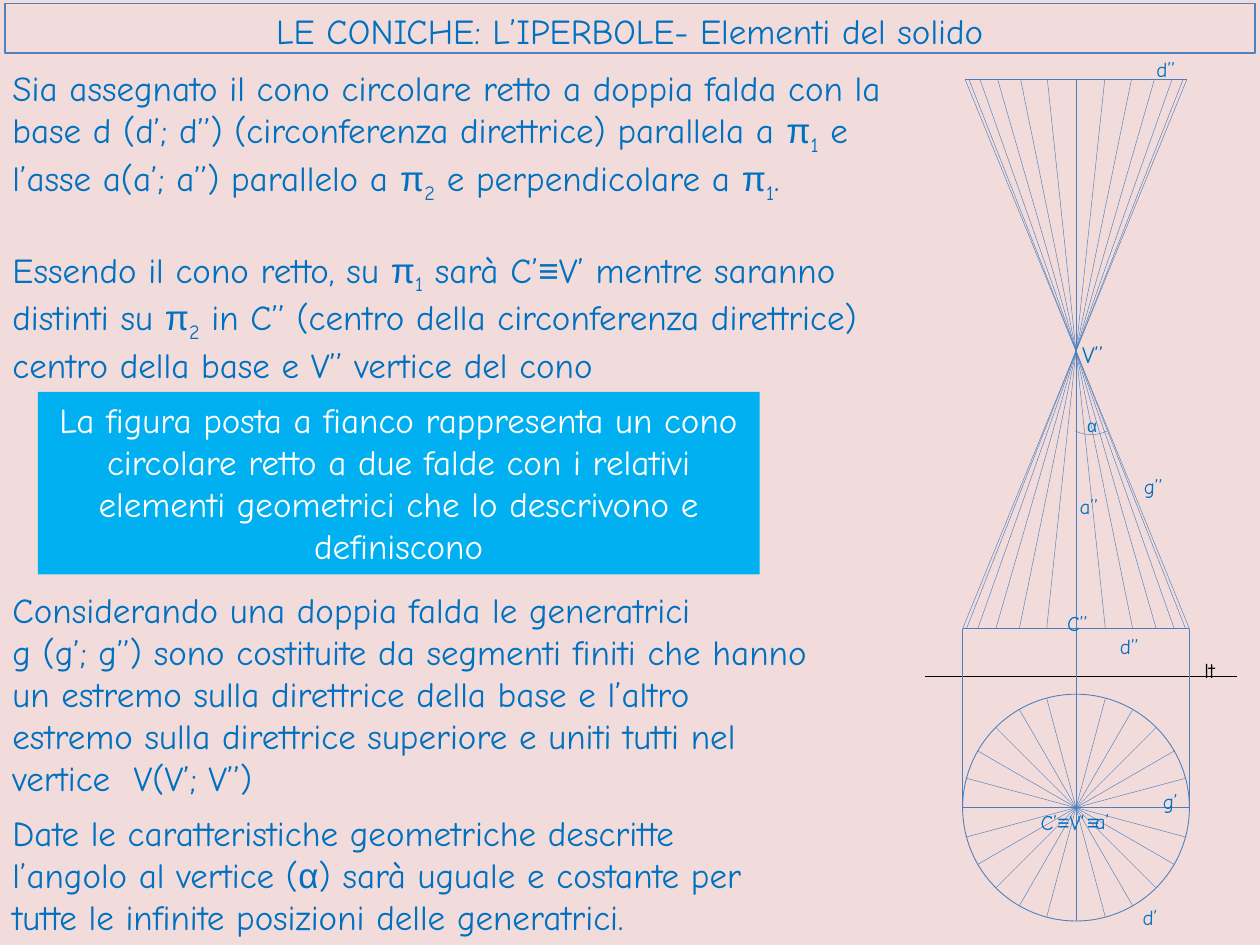
from dataclasses import dataclass
from itertools import groupby
from math import cos, radians, sin

from lxml import etree
from pptx import Presentation
from pptx.dml.color import RGBColor
from pptx.enum import shapes, text
from pptx.oxml import ns
from pptx.util import Inches, Pt

BACKGROUND = RGBColor(0xF2, 0xDC, 0xDB)
TEXT_BLUE = RGBColor(0x00, 0x70, 0xC0)
OUTLINE_BLUE = RGBColor(0x4F, 0x81, 0xBD)
LINE_BLUE = RGBColor(0x4B, 0x7E, 0xBC)
CALLOUT_BLUE = RGBColor(0x00, 0xB0, 0xF0)
WHITE = RGBColor(0xFF, 0xFF, 0xFF)
BLACK = RGBColor(0x00, 0x00, 0x00)

FONT, SYMBOL_FONT = "Comic Neue", "Arial"
SYMBOLS = "π≡α"
SUBSCRIPTS = {"₁": "1", "₂": "2"}

# Cone: plan centre and radius, heights of the upper and lower base, ground line
AXIS_X, PLAN_Y, RADIUS = 8.54, 6.41, 0.9
TOP_Y, TOP_RADIUS, BASE_Y, GROUND_Y = 0.63, 0.88, 4.99, 5.37
STEP = 15


@dataclass
class Block:
    left: float
    top: float
    width: float
    height: float
    paragraphs: tuple[str, ...]
    size: float = 20
    color: RGBColor = TEXT_BLUE
    align: text.PP_ALIGN = text.PP_ALIGN.LEFT
    anchor: text.MSO_ANCHOR = text.MSO_ANCHOR.TOP


@dataclass
class Label:
    left: float
    top: float
    words: str
    width: float = 0.39
    height: float = 0.21
    size: float = 12
    color: RGBColor = TEXT_BLUE
    anchor: text.MSO_ANCHOR = text.MSO_ANCHOR.TOP


MIDDLE = text.MSO_ANCHOR.MIDDLE
CENTER = text.PP_ALIGN.CENTER

TITLE = Block(0.04, 0.03, 9.92, 0.39,
              ("LE CONICHE: L’IPERBOLE- Elementi del solido",), align=CENTER)
CALLOUT = Block(0.3, 3.11, 5.73, 1.45, (
    "La figura posta a fianco rappresenta un cono circolare retto a due falde "
    "con i relativi elementi geometrici che lo descrivono e definiscono",),
    color=WHITE, align=CENTER)
BODY = [
    Block(0, 0.48, 7.28, 1.45, (
        "Sia assegnato il cono circolare retto a doppia falda con la base d (d’; d’’) "
        "(circonferenza direttrice) parallela a π₁ e l’asse a(a’; a’’) parallelo a π₂ "
        "e perpendicolare a π₁.",)),
    Block(0, 1.92, 7.28, 1.11, (
        "Essendo il cono retto, su π₁ sarà C’≡V’ mentre saranno distinti su π₂ in C’’ "
        "(centro della circonferenza direttrice) centro della base e V’’ vertice del cono",)),
    Block(0, 4.62, 6.62, 1.78, (
        "Considerando una doppia falda le generatrici",
        "g (g’; g’’) sono costituite da segmenti finiti che hanno un estremo sulla "
        "direttrice della base e l’altro estremo sulla direttrice superiore e uniti "
        "tutti nel vertice  V(V’; V’’)")),
    Block(0, 6.39, 6.42, 1.11, (
        "Date le caratteristiche geometriche descritte l’angolo al vertice (α) sarà "
        "uguale e costante per tutte le infinite posizioni delle generatrici.",)),
]
LABELS = [
    Label(9.08, 0.4, "d’’"),
    Label(8.49, 2.65, "V’’", height=0.23, size=13.5),
    Label(8.53, 3.26, "α", width=0.3, height=0.23, size=10, anchor=MIDDLE),
    Label(8.98, 3.78, "g’’", height=0.16, anchor=MIDDLE),
    Label(8.47, 3.87, "a’’"),
    Label(8.37, 4.8, "C’’"),
    Label(8.79, 4.98, "d’’"),
    Label(9.46, 5.17, "lt", color=BLACK),
    Label(9.13, 6.25, "g’", anchor=MIDDLE),
    Label(8.16, 6.42, "C’≡V’", width=0.59, anchor=MIDDLE),
    Label(8.53, 6.42, "≡", width=0.3, anchor=MIDDLE),
    Label(8.59, 6.41, "a’", anchor=MIDDLE),
    Label(8.97, 7.13, "d’"),
]


def box(item: Block | Label) -> tuple[Inches, ...]:
    return tuple(Inches(v) for v in (item.left, item.top, item.width, item.height))


def char_style(char: str) -> str:
    if char in SYMBOLS:
        return "symbol"
    return "subscript" if char in SUBSCRIPTS else "plain"


def write(frame, paragraphs, size, color, align, anchor) -> None:
    """Fill a frame, setting symbols in their own font and lowering indices."""
    frame.word_wrap = True
    frame.vertical_anchor = anchor
    for index, words in enumerate(paragraphs):
        paragraph = frame.add_paragraph() if index else frame.paragraphs[0]
        paragraph.alignment = align
        paragraph.font.size = Pt(size)
        paragraph.font.name = FONT
        paragraph.font.color.rgb = color
        for style, chars in groupby(words, char_style):
            run = paragraph.add_run()
            run.text = "".join(SUBSCRIPTS.get(c, c) for c in chars)
            if style == "symbol":
                run.font.name = SYMBOL_FONT
            elif style == "subscript":
                run.font._element.set("baseline", "-25000")


def add_block(slide, block: Block, shape=None) -> None:
    shape = shape or slide.shapes.add_textbox(*box(block))
    write(shape.text_frame, block.paragraphs, block.size, block.color,
          block.align, block.anchor)


def add_label(slide, label: Label) -> None:
    frame = slide.shapes.add_textbox(*box(label)).text_frame
    write(frame, (label.words,), label.size, label.color,
          text.PP_ALIGN.LEFT, label.anchor)


def add_outline(slide, kind, left, top, width, height, color, weight):
    shape = slide.shapes.add_shape(kind, *map(Inches, (left, top, width, height)))
    shape.shadow.inherit = False
    shape.fill.background()
    shape.line.color.rgb = color
    shape.line.width = Pt(weight)
    return shape


def add_line(slide, x1: float, y1: float, x2: float, y2: float,
             color: RGBColor = LINE_BLUE, weight: float = 0.25) -> None:
    line = slide.shapes.add_connector(
        shapes.MSO_CONNECTOR.STRAIGHT, *map(Inches, (x1, y1, x2, y2)))
    line.line.color.rgb = color
    line.line.width = Pt(weight)
    etree.SubElement(line._element.spPr, ns.qn("a:effectLst"))


def draw_elevation(slide) -> None:
    for angle in range(0, 181, STEP):
        if angle != 90:
            reach = cos(radians(angle))
            add_line(slide, AXIS_X - TOP_RADIUS * reach, TOP_Y,
                     AXIS_X + RADIUS * reach, BASE_Y)
    add_line(slide, AXIS_X, TOP_Y, AXIS_X, PLAN_Y)
    add_line(slide, AXIS_X - TOP_RADIUS, TOP_Y, AXIS_X + TOP_RADIUS, TOP_Y)
    add_line(slide, AXIS_X - RADIUS, BASE_Y, AXIS_X + RADIUS, BASE_Y, weight=0.5)
    for side in (-RADIUS, RADIUS):
        add_line(slide, AXIS_X + side, BASE_Y, AXIS_X + side, PLAN_Y)
    vertex_angle = add_outline(slide, shapes.MSO_SHAPE.ARC,
                               8.41, 3.01, 0.5, 0.44, LINE_BLUE, 0.25)
    vertex_angle.rotation = 180
    vertex_angle.adjustments[0] = 142.53
    vertex_angle.adjustments[1] = 182


def draw_plan(slide) -> None:
    add_line(slide, 7.34, GROUND_Y, 9.82, GROUND_Y, BLACK)
    add_outline(slide, shapes.MSO_SHAPE.OVAL, AXIS_X - RADIUS, PLAN_Y - RADIUS,
                2 * RADIUS, 2 * RADIUS, OUTLINE_BLUE, 0.5)
    for angle in range(0, 360, STEP):
        if angle != 270:  # the axis already runs down to the centre
            add_line(slide, AXIS_X, PLAN_Y, AXIS_X + RADIUS * cos(radians(angle)),
                     PLAN_Y + RADIUS * sin(radians(angle)))


def main() -> None:
    deck = Presentation()
    deck.slide_width, deck.slide_height = Inches(10), Inches(7.5)
    slide = deck.slides.add_slide(deck.slide_layouts[6])
    slide.background.fill.solid()
    slide.background.fill.fore_color.rgb = BACKGROUND

    title = add_outline(slide, shapes.MSO_SHAPE.RECTANGLE, TITLE.left, TITLE.top,
                        TITLE.width, TITLE.height, OUTLINE_BLUE, 0.75)
    add_block(slide, TITLE, title)
    for block in BODY:
        add_block(slide, block)
    callout = slide.shapes.add_shape(shapes.MSO_SHAPE.RECTANGLE, *box(CALLOUT))
    callout.shadow.inherit = False
    callout.fill.solid()
    callout.fill.fore_color.rgb = CALLOUT_BLUE
    callout.line.fill.background()
    add_block(slide, CALLOUT, callout)

    draw_plan(slide)
    draw_elevation(slide)
    for label in LABELS:
        add_label(slide, label)
    deck.save("out.pptx")


if __name__ == "__main__":
    main()
